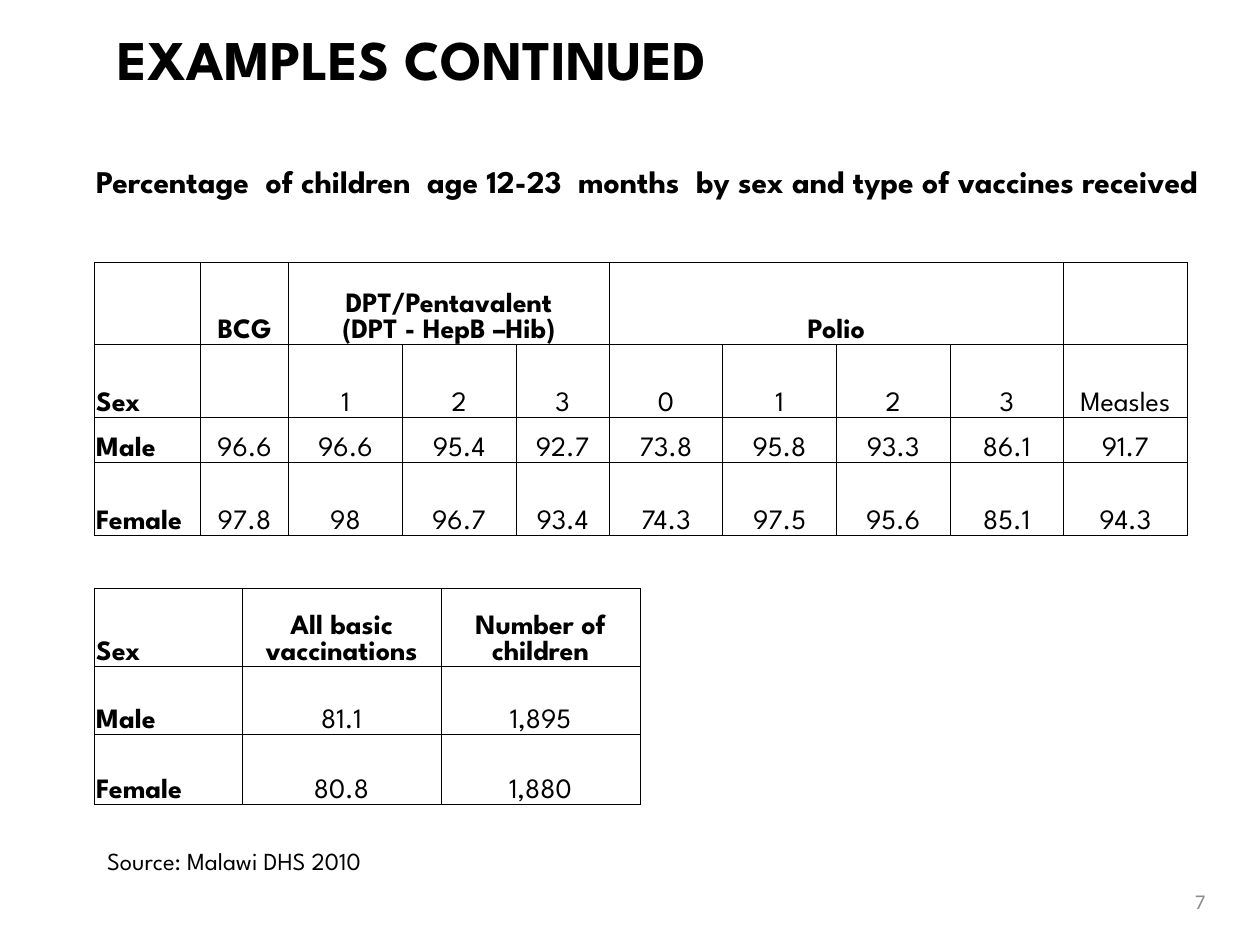
from dataclasses import dataclass

from lxml.etree import SubElement
from pptx import Presentation
from pptx.dml.color import RGBColor
from pptx.enum.text import MSO_ANCHOR as Anchor, PP_ALIGN as Align
from pptx.oxml.ns import qn
from pptx.util import Cm, Pt


@dataclass(frozen=True)
class Theme:
    face: str = "League Spartan"
    number_face: str = "Calibri"
    ink: str = "000000"
    grey: str = "8C8C8C"
    title: int = 32
    subtitle: int = 18
    cell: int = 16
    source: int = 14
    number: int = 12
    rule: float = 0.5


theme = Theme()


def write(frame, text, size=theme.cell, bold=False, color=theme.ink,
          face=theme.face, align=Align.LEFT, anchor=Anchor.TOP, wrap=True):
    frame.word_wrap = wrap
    frame.vertical_anchor = anchor
    frame.text = text
    for paragraph in frame.paragraphs:
        paragraph.alignment = align
        paragraph.font.size = Pt(size)
        for run in paragraph.runs:
            run.font.size = Pt(size)
            run.font.bold = bold
            run.font.name = face
            run.font.color.rgb = RGBColor.from_string(color)


def rule_cell(cell):
    properties = cell._tc.get_or_add_tcPr()
    for side in ("lnL", "lnR", "lnT", "lnB"):
        line = SubElement(properties, qn(f"a:{side}"), w=str(Pt(theme.rule)))
        SubElement(SubElement(line, qn("a:solidFill")), qn("a:srgbClr"), val=theme.ink)
    cell.fill.background()


deck = Presentation()
deck.slide_width, deck.slide_height = Cm(25.4), Cm(19.05)
slide = deck.slides.add_slide(deck.slide_layouts[6])

texts = [
    ("EXAMPLES CONTINUED", (2.12, -0.42, 22.42, 3.17),
     dict(size=theme.title, bold=True, anchor=Anchor.MIDDLE)),
    ("Percentage  of children  age 12-23  months  by sex and type of vaccines received",
     (1.69, 2.75, 23.07, 1.8),
     dict(size=theme.subtitle, bold=True, align=Align.JUSTIFY, anchor=Anchor.MIDDLE)),
    ("Source: Malawi DHS 2010", (1.91, 16.93, 6.56, 0.86),
     dict(size=theme.source, wrap=False)),
    ("7", (18.63, 17.66, 5.92, 1.01),
     dict(size=theme.number, face=theme.number_face, color=theme.grey,
          align=Align.RIGHT, anchor=Anchor.MIDDLE)),
]
for text, box, style in texts:
    write(slide.shapes.add_textbox(*map(Cm, box)).text_frame, text, **style)

vaccines = [
    ["", "BCG", "DPT/Pentavalent\n(DPT - HepB –Hib)", "", "", "Polio", "", "", "", ""],
    ["Sex", "", "1", "2", "3", "0", "1", "2", "3", "Measles"],
    ["Male", "96.6", "96.6", "95.4", "92.7", "73.8", "95.8", "93.3", "86.1", "91.7"],
    ["Female", "97.8", "98", "96.7", "93.4", "74.3", "97.5", "95.6", "85.1", "94.3"],
]
totals = [
    ["Sex", "All basic vaccinations", "Number of children"],
    ["Male", "81.1", "1,895"],
    ["Female", "80.8", "1,880"],
]
tables = [
    (vaccines, 5.29, [2.13, 1.78, 2.29, 2.29, 1.88] + [2.29] * 4 + [2.49],
     [1.65, 1.47, 0.91, 1.47], [(2, 4), (5, 8)]),
    (totals, 11.86, [2.97, 4.01, 4.01], [1.57, 1.37, 1.42], []),
]
for rows, top, widths, heights, header_spans in tables:
    table = slide.shapes.add_table(
        len(rows), len(widths), Cm(1.91), Cm(top), Cm(sum(widths)), Cm(sum(heights))
    ).table
    table.first_row = table.horz_banding = False
    for column, width in zip(table.columns, widths):
        column.width = Cm(width)
    for row, height in zip(table.rows, heights):
        row.height = Cm(height)
    for r, values in enumerate(rows):
        for c, value in enumerate(values):
            cell = table.cell(r, c)
            cell.margin_left = cell.margin_right = cell.margin_top = Cm(0.03)
            cell.margin_bottom = 0
            write(cell.text_frame, value, bold=r == 0 or c == 0,
                  align=Align.CENTER if c else Align.LEFT)
            cell.vertical_anchor = Anchor.BOTTOM
            rule_cell(cell)
    for first, last in header_spans:
        table.cell(0, first).merge(table.cell(0, last))

deck.save("out.pptx")
